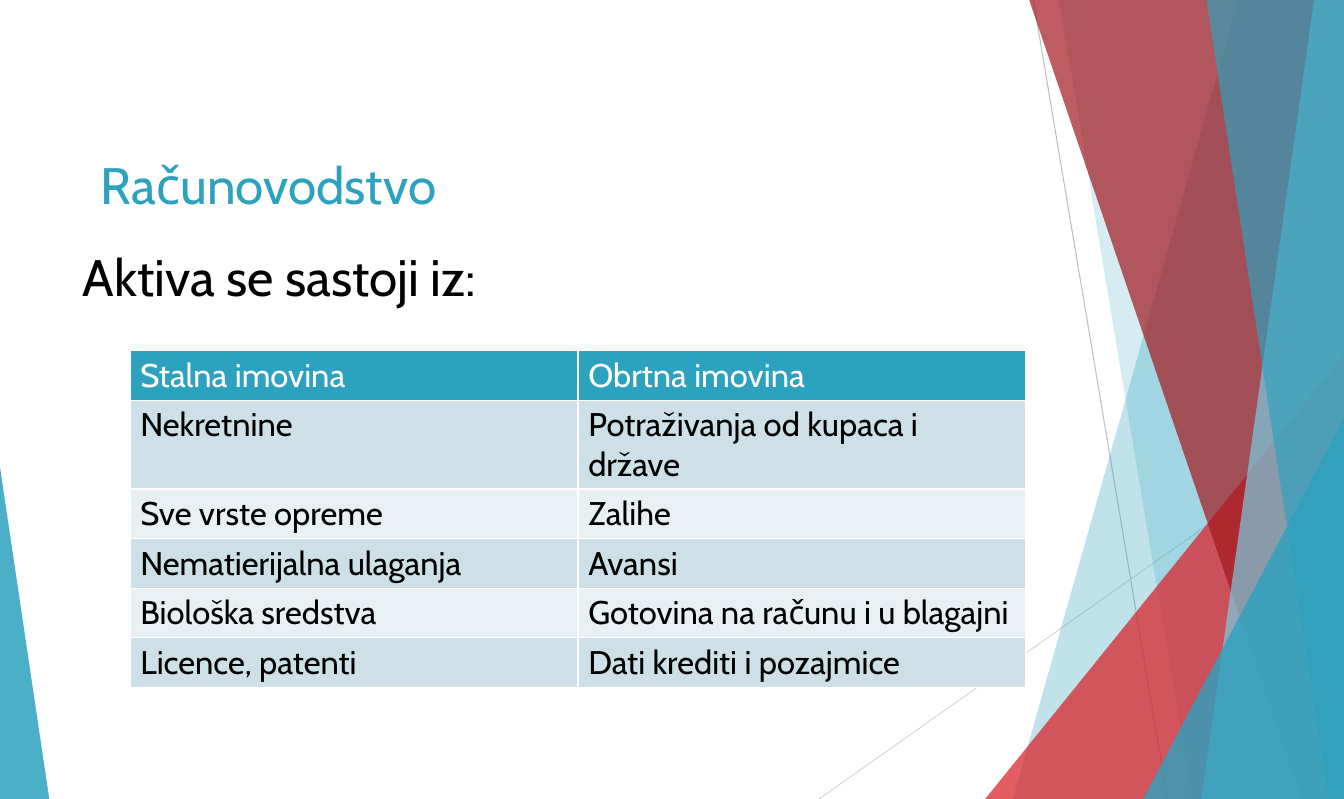
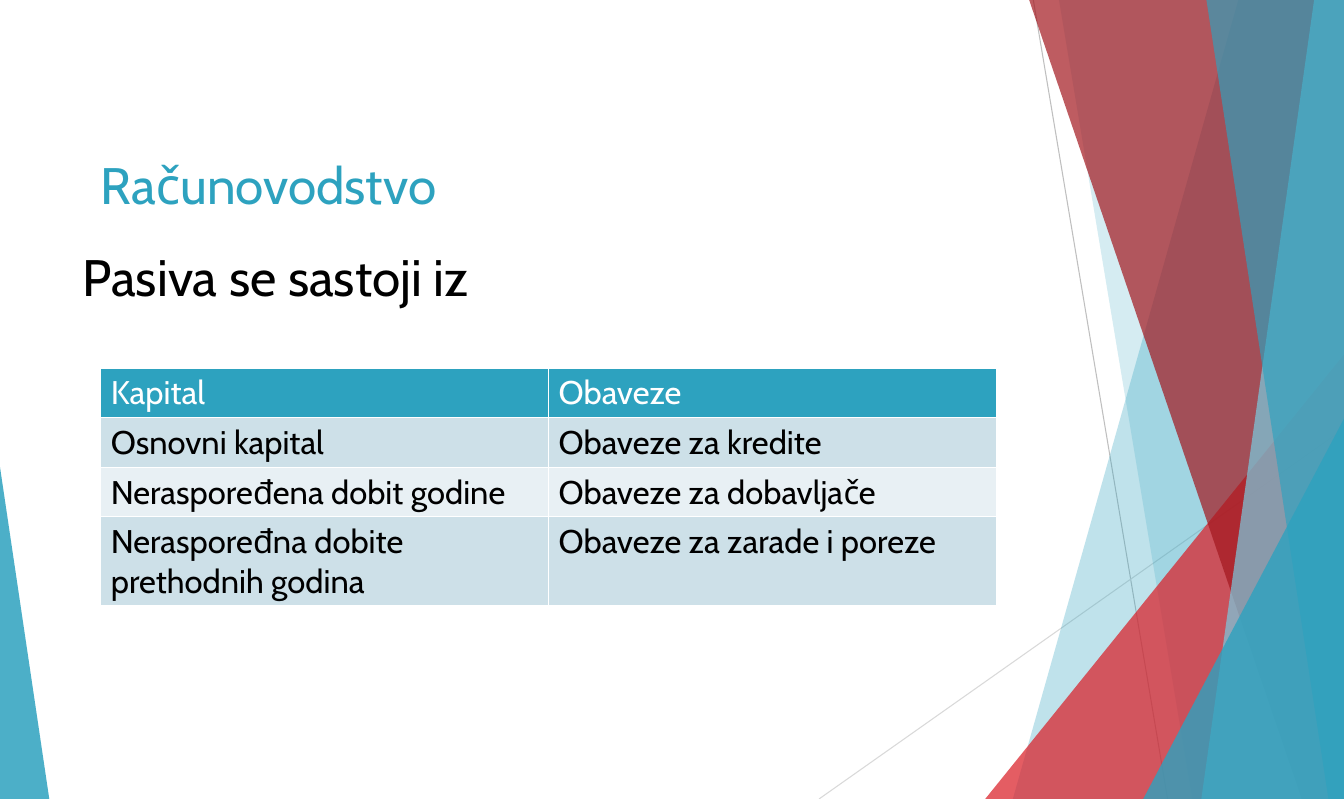
from dataclasses import dataclass

from pptx import Presentation
from pptx.dml.color import RGBColor
from pptx.enum.shapes import MSO_CONNECTOR as Connector, MSO_SHAPE as Preset
from pptx.oxml.ns import qn
from pptx.oxml.xmlchemy import OxmlElement
from pptx.shapes.autoshape import Shape
from pptx.slide import Slide
from pptx.table import _Cell as Cell
from pptx.text.text import TextFrame
from pptx.util import Pt

WIDTH, HEIGHT = 944, 561
FONT = "Cabin"
COLORS = {
    "teal": "2DA2BF", "sky": "7ACBE0", "red": "DA1F28", "dark_red": "A3171E",
    "white": "FFFFFF", "black": "000000", "band": "CDE0E8", "pale": "E8F0F4",
    "gray": "BFBFBF", "light_gray": "D9D9D9",
}


@dataclass(frozen=True)
class Line:
    start: tuple[float, float]
    end: tuple[float, float]
    color: str


@dataclass(frozen=True)
class Band:
    """Full-height area from a slanted edge to the right side of the slide."""
    top_x: float
    bottom_x: float
    color: str
    opacity: int


@dataclass(frozen=True)
class Corner:
    """Triangle standing on the bottom edge; apex 0 is left, 1 is right."""
    left: float
    top: float
    width: float
    apex: int
    color: str
    opacity: int


@dataclass(frozen=True)
class Page:
    heading: str
    table_left: float
    table_top: float
    rows: list[tuple[str, str]]


# Shared decoration, from back to front
DECORATION = [
    Line((725.8, 0), (820.1, HEIGHT), "gray"),
    Line((WIDTH, 301), (575.3, HEIGHT), "light_gray"),
    Band(869.8, 711.4, "teal", 30),
    Band(743.8, 837.4, "teal", 20),
    Corner(692, 249, 252, 1, "red", 72),
    Band(722.9, 914.4, "dark_red", 70),
    Band(923, 843.8, "sky", 70),
    Band(847.4, 933.1, "teal", 65),
    Corner(803, 294, 141, 1, "teal", 80),
    Corner(0, 328, 34.6, 0, "teal", 85),
]

TITLE = "Računovodstvo"
COLUMN_WIDTH, ROW_HEIGHT = 314.6, 29.5
PAGES = [
    Page("Aktiva se sastoji iz:", 91.4, 246.2, [
        ("Stalna imovina", "Obrtna imovina"),
        ("Nekretnine", "Potraživanja od kupaca i države"),
        ("Sve vrste opreme", "Zalihe"),
        ("Nematierijalna ulaganja", "Avansi"),
        ("Biološka sredstva", "Gotovina na računu i u blagajni"),
        ("Licence, patenti", "Dati krediti i pozajmice"),
    ]),
    Page("Pasiva se sastoji iz", 70.6, 258.5, [
        ("Kapital", "Obaveze"),
        ("Osnovni kapital", "Obaveze za kredite"),
        ("Neraspoređena dobit godine", "Obaveze za dobavljače"),
        ("Neraspoređna dobite prethodnih godina", "Obaveze za zarade i poreze"),
    ]),
]


def rgb(name: str) -> RGBColor:
    return RGBColor.from_string(COLORS[name])


def paint(shape: Shape, color: str, opacity: int) -> None:
    shape.shadow.inherit = False
    shape.line.fill.background()
    shape.fill.solid()
    shape.fill.fore_color.rgb = rgb(color)
    alpha = OxmlElement("a:alpha")
    alpha.set("val", str(opacity * 1000))
    shape.element.spPr.find(qn("a:solidFill"))[0].append(alpha)


def draw_line(slide: Slide, line: Line) -> None:
    ends = [Pt(value) for value in (*line.start, *line.end)]
    connector = slide.shapes.add_connector(Connector.STRAIGHT, *ends)
    connector.line.color.rgb = rgb(line.color)
    connector.line.width = Pt(0.75)
    connector.element.spPr.append(OxmlElement("a:effectLst"))


def draw_band(slide: Slide, band: Band) -> None:
    builder = slide.shapes.build_freeform(Pt(band.top_x), 0)
    corners = [(WIDTH, 0), (WIDTH, HEIGHT), (band.bottom_x, HEIGHT)]
    builder.add_line_segments([(Pt(x), Pt(y)) for x, y in corners], close=True)
    paint(builder.convert_to_shape(), band.color, band.opacity)


def draw_corner(slide: Slide, corner: Corner) -> None:
    shape = slide.shapes.add_shape(
        Preset.ISOSCELES_TRIANGLE, Pt(corner.left), Pt(corner.top),
        Pt(corner.width), Pt(HEIGHT - corner.top))
    shape.adjustments[0] = corner.apex
    paint(shape, corner.color, corner.opacity)


DRAWERS = {Line: draw_line, Band: draw_band, Corner: draw_corner}


def write(frame: TextFrame, text: str, size: float, color: str) -> None:
    run = frame.paragraphs[0].add_run()
    run.text = text
    run.font.name = FONT
    run.font.size = Pt(size)
    run.font.bold = False
    run.font.color.rgb = rgb(color)


def add_text(slide: Slide, box: tuple[float, float, float, float], text: str,
             color: str, line_spacing: float = 1.0) -> None:
    frame = slide.shapes.add_textbox(*(Pt(value) for value in box)).text_frame
    frame.word_wrap = True
    frame.paragraphs[0].line_spacing = line_spacing
    write(frame, text, 36, color)


def add_borders(cell: Cell) -> None:
    properties = cell._tc.get_or_add_tcPr()
    for side in ("L", "R", "T", "B"):
        border = OxmlElement(f"a:ln{side}")
        border.set("w", str(Pt(1)))
        fill = OxmlElement("a:solidFill")
        color = OxmlElement("a:srgbClr")
        color.set("val", COLORS["white"])
        fill.append(color)
        border.append(fill)
        properties.append(border)


def add_grid(slide: Slide, page: Page) -> None:
    columns = len(page.rows[0])
    table = slide.shapes.add_table(
        len(page.rows), columns, Pt(page.table_left), Pt(page.table_top),
        Pt(COLUMN_WIDTH * columns), Pt(ROW_HEIGHT * len(page.rows))).table
    table.horz_banding = False
    for row_index, row in enumerate(page.rows):
        if row_index == 0:
            fill, ink = "teal", "white"
        else:
            fill, ink = ("band" if row_index % 2 else "pale"), "black"
        for column_index, text in enumerate(row):
            cell = table.cell(row_index, column_index)
            add_borders(cell)
            cell.fill.solid()
            cell.fill.fore_color.rgb = rgb(fill)
            write(cell.text_frame, text, 23, ink)


def build_slide(presentation: Presentation, page: Page) -> None:
    slide = presentation.slides.add_slide(presentation.slide_layouts[6])
    for item in DECORATION:
        DRAWERS[type(item)](slide, item)
    add_text(slide, (51.1, 177.1, 666.7, 296.6), page.heading, "black", 0.8)
    add_grid(slide, page)
    add_text(slide, (63.4, 103.7, 663.1, 87.1), TITLE, "teal")


def main() -> None:
    presentation = Presentation()
    presentation.slide_width, presentation.slide_height = Pt(WIDTH), Pt(HEIGHT)
    for page in PAGES:
        build_slide(presentation, page)
    presentation.save("out.pptx")


if __name__ == "__main__":
    main()
